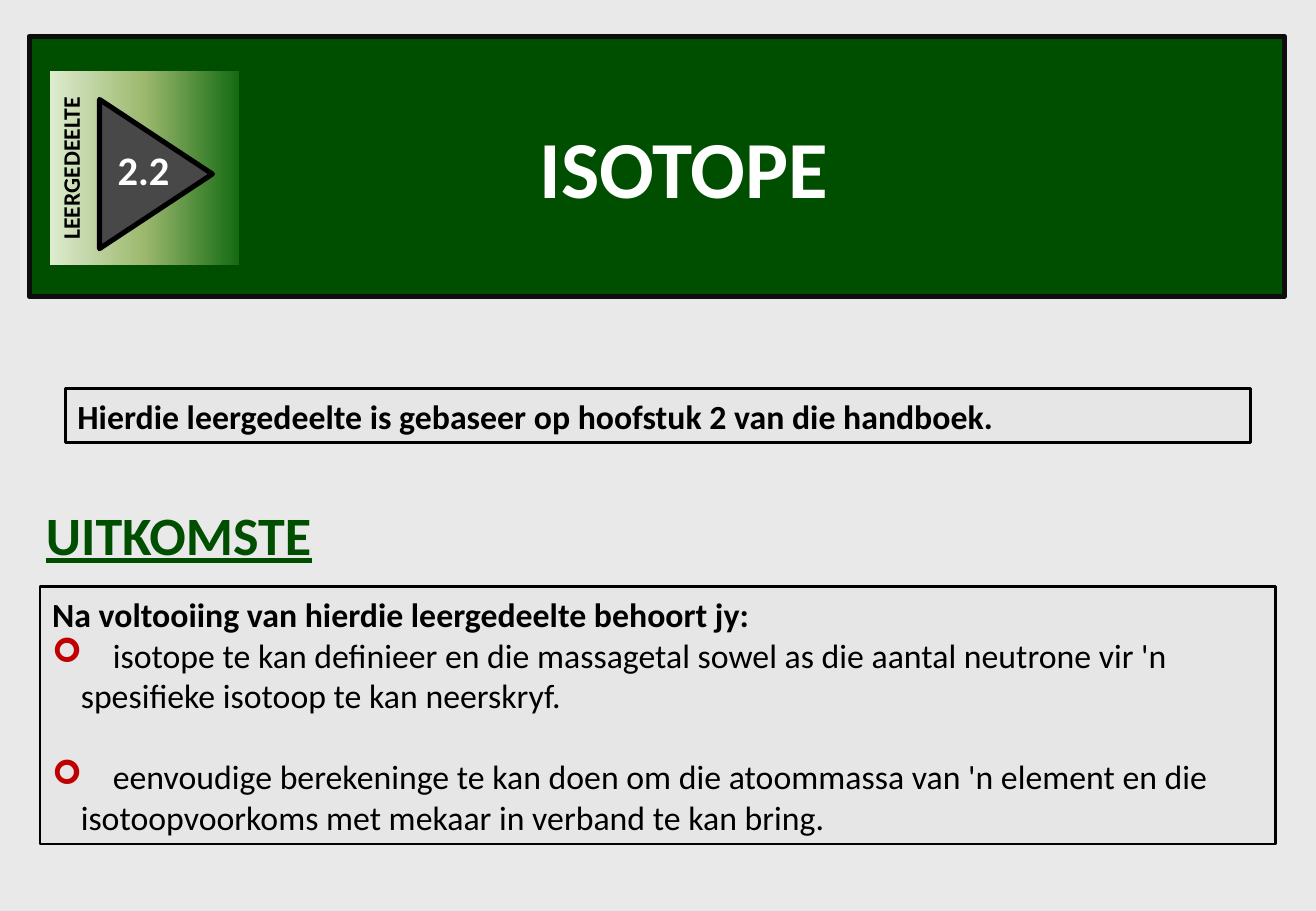
from dataclasses import dataclass

from lxml import etree
from pptx import Presentation
from pptx.dml.color import RGBColor
from pptx.enum.shapes import MSO_SHAPE
from pptx.enum.text import MSO_ANCHOR, PP_ALIGN
from pptx.oxml.ns import qn
from pptx.util import Cm, Pt

RECTANGLE = MSO_SHAPE.RECTANGLE
TRIANGLE = MSO_SHAPE.ISOSCELES_TRIANGLE
TOP, MIDDLE = MSO_ANCHOR.TOP, MSO_ANCHOR.MIDDLE
LEFT, CENTER = PP_ALIGN.LEFT, PP_ALIGN.CENTER


@dataclass(frozen=True)
class Theme:
    """Colours, font and type sizes of the slide."""
    font: str = "Calibri"
    backdrop: str = "E9E9E9"
    panel: str = "E6E6E6"
    green: str = "004E00"
    banner_edge: str = "0D0D0D"
    arrow: str = "484848"
    black: str = "000000"
    white: str = "FFFFFF"
    bullet: str = "C00000"
    tile: tuple = ((0, "DDEBCF"), (50, "9CB86E"), (100, "156B13"))
    title_size: int = 60
    heading_size: int = 32
    number_size: int = 24
    body_size: int = 20
    label_size: int = 14
    heavy_line: float = 3
    thin_line: float = 1.5


THEME = Theme()


def rgb(value):
    """Turn a hex value into a colour."""
    return RGBColor.from_string(value)


def lengths(box):
    """Turn a box in centimetres into lengths."""
    return [Cm(value) for value in box]


def inside(box, left, top, width, height):
    """Place a part relative to the corner of its region."""
    return box[0] + left, box[1] + top, width, height


def add_block(slide, box, fill=None, line=None, weight=0, kind=RECTANGLE):
    """Add a flat preset shape."""
    block = slide.shapes.add_shape(kind, *lengths(box))
    block.shadow.inherit = False
    if fill:
        block.fill.solid()
        block.fill.fore_color.rgb = rgb(fill)
    if line:
        block.line.color.rgb = rgb(line)
        block.line.width = Pt(weight)
    else:
        block.line.fill.background()
    return block


def write(frame, lines, size, color, align=LEFT, anchor=TOP, wrap=True):
    """Fill a text frame with bold lines."""
    frame.text = "\n".join(lines)
    frame.word_wrap = wrap
    frame.vertical_anchor = anchor
    for paragraph in frame.paragraphs:
        paragraph.alignment = align
        for run in paragraph.runs:
            run.font.name = THEME.font
            run.font.size = Pt(size)
            run.font.bold = True
            run.font.color.rgb = rgb(color)
    return frame.paragraphs


def add_text(slide, box, text, size, color, align=LEFT, wrap=True):
    """Add a text box with one line and return its run."""
    frame = slide.shapes.add_textbox(*lengths(box)).text_frame
    return write(frame, [text], size, color, align, wrap=wrap)[0].runs[0]


def blend(shape, stops, angle):
    """Give a shape a linear gradient with any number of stops."""
    shape.fill.gradient()
    shape.fill.gradient_angle = angle
    stop_list = shape.element.spPr.find(".//" + qn("a:gsLst"))
    for stop in list(stop_list):
        stop_list.remove(stop)
    for percent, color in stops:
        stop = etree.SubElement(stop_list, qn("a:gs"), pos=str(percent * 1000))
        etree.SubElement(stop, qn("a:srgbClr"), val=color)


def add_bullet(paragraph, symbol, color, hanging, text_start):
    """Give a paragraph a coloured bullet, a hanging indent and a tab stop."""
    properties = paragraph._p.get_or_add_pPr()
    properties.set("marL", str(Cm(hanging)))
    properties.set("indent", str(-Cm(hanging)))
    bullet_color = etree.SubElement(properties, qn("a:buClr"))
    etree.SubElement(bullet_color, qn("a:srgbClr"), val=color)
    etree.SubElement(properties, qn("a:buFont"), typeface="Wingdings")
    etree.SubElement(properties, qn("a:buChar"), char=symbol)
    tabs = etree.SubElement(properties, qn("a:tabLst"))
    etree.SubElement(tabs, qn("a:tab"), pos=str(Cm(text_start)), algn="l")


def draw_banner(slide, box, title, label, number):
    """Draw the green banner with the section tile and the title."""
    add_block(slide, box, THEME.green, THEME.banner_edge, THEME.heavy_line)
    title_run = add_text(slide, inside(box, 7.67, 1.15, 12.04, 2.82), title,
                         THEME.title_size, THEME.white, CENTER)
    title_run.font._element.set("cap", "small")

    tile = add_block(slide, inside(box, 0.38, 0.79, 4.06, 3.94))
    tile.rotation = 270
    blend(tile, THEME.tile, 270)
    write(tile.text_frame, [label], THEME.label_size, THEME.black, CENTER)

    arrow = add_block(slide, inside(box, 1.09, 1.7, 3.12, 2.36), THEME.arrow,
                      THEME.black, THEME.heavy_line, TRIANGLE)
    arrow.rotation = 90
    add_text(slide, inside(box, 1.6, 2.14, 1.6, 1.3), number,
             THEME.number_size, THEME.white, wrap=False)


def draw_panel(slide, box, lines):
    """Draw a framed panel of bold text and return its paragraphs."""
    panel = add_block(slide, box, THEME.panel, THEME.black, THEME.thin_line)
    return write(panel.text_frame, lines, THEME.body_size, THEME.black,
                 anchor=MIDDLE)


def draw_outcomes(slide, box, heading, intro, outcomes):
    """Draw the heading and below it the panel of bulleted outcomes."""
    heading_run = add_text(slide, inside(box, -0.13, -1.91, 7.34, 1.63),
                           heading, THEME.heading_size, THEME.green)
    heading_run.font.underline = True
    lines = [intro] + ["\t" + outcome for outcome in outcomes]
    for index, paragraph in enumerate(draw_panel(slide, box, lines)[1:]):
        paragraph.runs[0].font.bold = False
        paragraph.space_before = Pt(24 if index else 0)
        add_bullet(paragraph, "➢", THEME.bullet, 0.6, 1.27)


def main():
    """Build the slide and save it."""
    deck = Presentation()
    deck.slide_width, deck.slide_height = Cm(27.51), Cm(19.05)
    slide = deck.slides.add_slide(deck.slide_layouts[6])
    slide.background.fill.solid()
    slide.background.fill.fore_color.rgb = rgb(THEME.backdrop)

    draw_banner(slide, (0.61, 0.76, 26.24, 5.44),
                "isotope", "LEERGEDEELTE", "2.2")
    draw_outcomes(
        slide, (0.84, 12.27, 25.83, 5.38), "UITKOMSTE",
        "Na voltooiing van hierdie leergedeelte behoort jy:",
        ["isotope te kan definieer en die massagetal sowel as die aantal "
         "neutrone vir 'n spesifieke isotoop te kan neerskryf.",
         "eenvoudige berekeninge te kan doen om die atoommassa van 'n element "
         "en die isotoopvoorkoms met mekaar in verband te kan bring."])
    draw_panel(slide, (1.37, 8.13, 24.77, 1.12),
               ["Hierdie leergedeelte is gebaseer op hoofstuk 2 van die "
                "handboek."])
    deck.save("out.pptx")


if __name__ == "__main__":
    main()
